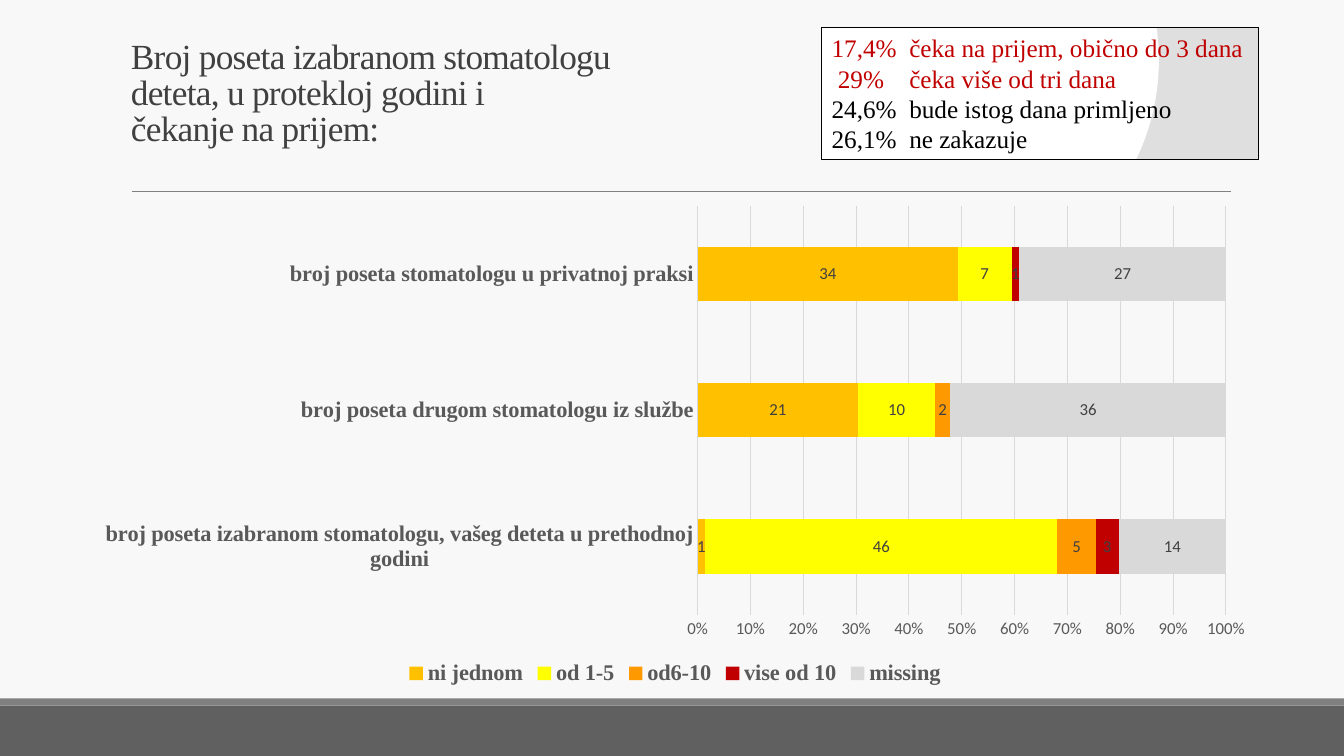
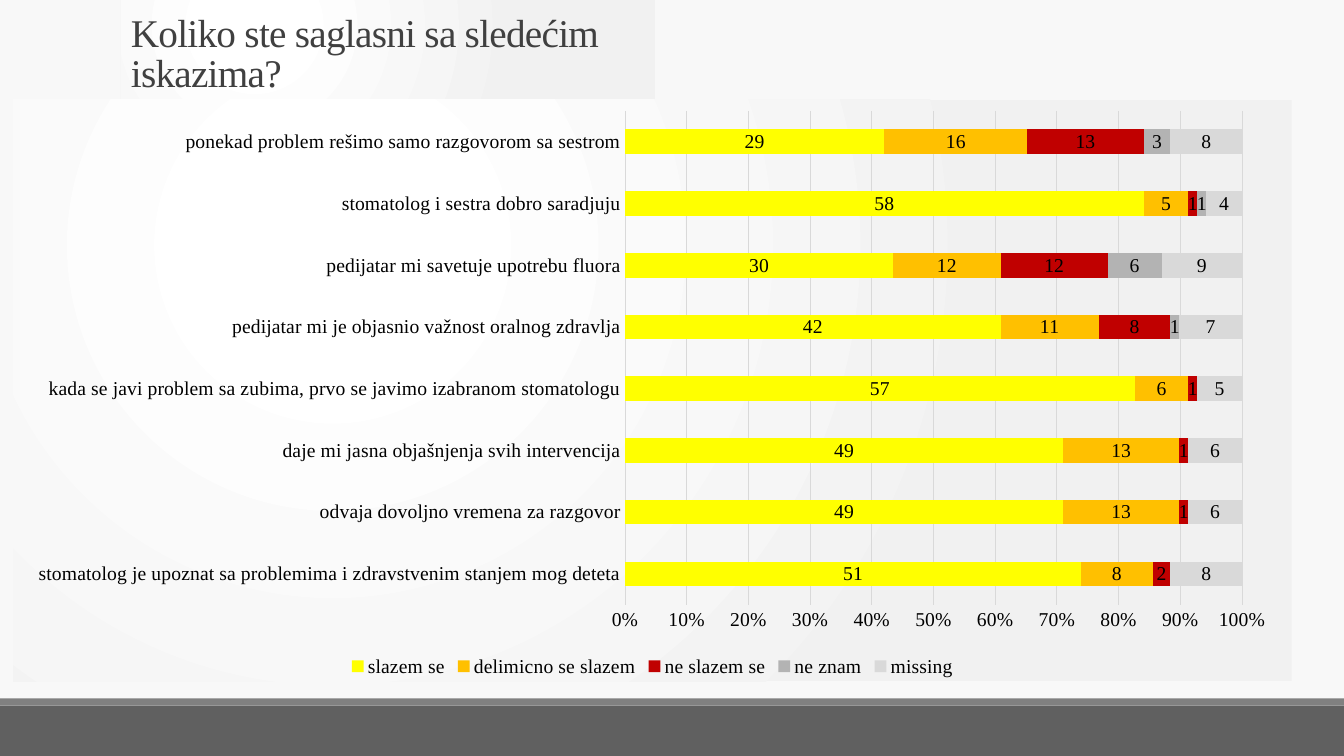
from dataclasses import dataclass

from lxml import etree
from pptx import Presentation
from pptx.chart.data import CategoryChartData
from pptx.dml.color import RGBColor
from pptx.enum.chart import XL_CHART_TYPE, XL_LABEL_POSITION, XL_LEGEND_POSITION, XL_TICK_MARK
from pptx.enum.shapes import MSO_CONNECTOR, MSO_SHAPE
from pptx.enum.text import MSO_ANCHOR, PP_ALIGN
from pptx.oxml import parse_xml
from pptx.oxml.ns import nsdecls, qn
from pptx.util import Inches, Pt


@dataclass(frozen=True)
class Theme:
    serif: str = "Times New Roman"
    sans: str = "Calibri"
    paper: str = "F8F8F8"
    band: str = "606060"
    rule: str = "808080"
    title: str = "404040"
    muted: str = "595959"
    ink: str = "000000"
    grid: str = "D9D9D9"
    amber: str = "FFC000"
    yellow: str = "FFFF00"
    orange: str = "FF9900"
    red: str = "C00000"
    gray: str = "B3B3B3"
    hairline: float = 0.75
    note_size: int = 18
    soft_glow: tuple = ((13, "FFFFFF"), (100, "F1F1F1"))
    hard_glow: tuple = ((100, "FFFFFF"), (100, "DFDFDF"))


THEME = Theme()
SERIF_14 = (THEME.serif, 14, THEME.ink, False)
SERIF_16_BOLD = (THEME.serif, 16, THEME.muted, True)

VISITS = {
    "title": "Broj poseta izabranom stomatologu deteta, u protekloj godini i \včekanje na prijem:",
    "title_size": 25.2,
    "title_box": (1.2, 0.31, 5.34, 1.21),
    "glow": None,
    "chart_box": (0.81, 1.94, 11.77, 4.91),
    "plot_box": (6.92, 2.04, 5.24, 4.06),
    "category_font": SERIF_16_BOLD,
    "legend_font": SERIF_16_BOLD,
    "value_font": (THEME.sans, 12, THEME.muted, False),
    "label_font": (THEME.sans, 12, THEME.title, False),
    "categories": [
        "broj poseta izabranom stomatologu, vašeg deteta u prethodnoj godini",
        "broj poseta drugom stomatologu iz službe",
        "broj poseta stomatologu u privatnoj praksi",
    ],
    "series": [
        ("ni jednom", THEME.amber, (1, 21, 34)),
        ("od 1-5", THEME.yellow, (46, 10, 7)),
        ("od6-10", THEME.orange, (5, 2, None)),
        ("vise od 10", THEME.red, (3, None, 1)),
        ("missing", THEME.grid, (14, 36, 27)),
    ],
}

AGREEMENT = {
    "title": "Koliko ste saglasni sa sledećim iskazima?",
    "title_size": 28,
    "title_box": (1.2, 0, 5.3, 1),
    "glow": THEME.soft_glow,
    "chart_box": (0.13, 0.99, 12.68, 5.77),
    "plot_box": (6.2, 1.1, 6.12, 4.9),
    "category_font": SERIF_14,
    "legend_font": SERIF_14,
    "value_font": SERIF_14,
    "label_font": SERIF_14,
    "categories": [
        "stomatolog je upoznat sa problemima i zdravstvenim stanjem mog deteta",
        "odvaja dovoljno vremena za razgovor",
        "daje mi jasna objašnjenja svih intervencija",
        "kada se javi problem sa zubima, prvo se javimo izabranom stomatologu",
        "pedijatar mi je objasnio važnost oralnog zdravlja",
        "pedijatar mi savetuje upotrebu fluora",
        "stomatolog i sestra dobro saradjuju",
        "ponekad problem rešimo samo razgovorom sa sestrom",
    ],
    "series": [
        ("slazem se", THEME.yellow, (51, 49, 49, 57, 42, 30, 58, 29)),
        ("delimicno se slazem", THEME.amber, (8, 13, 13, 6, 11, 12, 5, 16)),
        ("ne slazem se", THEME.red, (2, 1, 1, 1, 8, 12, 1, 13)),
        ("ne znam", THEME.gray, (None, None, None, None, 1, 6, 1, 3)),
        ("missing", THEME.grid, (8, 6, 6, 5, 7, 9, 4, 8)),
    ],
}

WAITING_BOX = (8.15, 0.27, 4.33, 1.31)
WAITING = [
    ("17,4%", "čeka na prijem, obično do 3 dana", THEME.red),
    (" 29%", "čeka više od tri dana", THEME.red),
    ("24,6%", "bude istog dana primljeno", THEME.ink),
    ("26,1%", "ne zakazuje", THEME.ink),
]
BANDS = [((0, 7, 13.33, 0.5), THEME.band), ((0, 6.93, 13.33, 0.07), THEME.rule)]
RULE = (1.31, 1.9, 12.21, 1.9)


def inches(box):
    return [Inches(length) for length in box]


def rgb(color):
    return RGBColor.from_string(color)


def style_font(font, name, size, color, bold=False):
    font.name, font.size, font.bold = name, Pt(size), bold
    font.color.rgb = rgb(color)


def glow_fill(properties, stops):
    stop_xml = "".join(
        f'<a:gs pos="{position * 1000}"><a:srgbClr val="{color}"/></a:gs>' for position, color in stops
    )
    gradient = parse_xml(
        f'<a:gradFill {nsdecls("a")} rotWithShape="1"><a:gsLst>{stop_xml}</a:gsLst>'
        '<a:path path="circle"><a:fillToRect l="50000" t="50000" r="100000" b="100000"/></a:path>'
        "</a:gradFill>"
    )
    properties.replace(properties.find(qn("a:noFill")), gradient)


def add_rectangle(page, box):
    shape = page.shapes.add_shape(MSO_SHAPE.RECTANGLE, *inches(box))
    shape.shadow.inherit = False
    shape.line.fill.background()
    shape.fill.background()
    return shape


def add_bands(page):
    page.background.fill.solid()
    page.background.fill.fore_color.rgb = rgb(THEME.paper)
    for box, color in BANDS:
        band = add_rectangle(page, box)
        band.fill.solid()
        band.fill.fore_color.rgb = rgb(color)


def add_title(page, content):
    box = page.shapes.add_textbox(*inches(content["title_box"]))
    if content["glow"]:
        box.fill.background()
        glow_fill(box.element.spPr, content["glow"])
    frame = box.text_frame
    frame.word_wrap = True
    frame.vertical_anchor = MSO_ANCHOR.BOTTOM
    para = frame.paragraphs[0]
    para.text = content["title"]
    para.line_spacing = 0.85
    for span in para.runs:
        style_font(span.font, THEME.serif, content["title_size"], THEME.title)
        span.font._element.set("spc", "-50")


def place_plot(chart, chart_box, plot_box):
    left, top, width, height = chart_box
    plot_left, plot_top, plot_width, plot_height = plot_box
    places = {
        "x": (plot_left - left) / width,
        "y": (plot_top - top) / height,
        "w": plot_width / width,
        "h": plot_height / height,
    }
    modes = '<c:layoutTarget val="inner"/><c:xMode val="edge"/><c:yMode val="edge"/>'
    values = "".join(f'<c:{key} val="{value:.4f}"/>' for key, value in places.items())
    layout = parse_xml(
        f'<c:layout {nsdecls("c")}><c:manualLayout>{modes}{values}</c:manualLayout></c:layout>'
    )
    plot_area = chart.element.find(".//" + qn("c:plotArea"))
    for existing in plot_area.findall(qn("c:layout")):
        plot_area.remove(existing)
    plot_area.insert(0, layout)


def fill_chart_area(chart, stops):
    properties = parse_xml(
        f'<c:spPr {nsdecls("c", "a")}><a:noFill/><a:ln><a:noFill/></a:ln></c:spPr>'
    )
    chart.element.find(qn("c:chart")).addnext(properties)
    if stops:
        glow_fill(properties, stops)


def add_bar_chart(page, content):
    data = CategoryChartData()
    data.categories = content["categories"]
    for name, _, values in content["series"]:
        data.add_series(name, values)
    chart = page.shapes.add_chart(
        XL_CHART_TYPE.BAR_STACKED_100, *inches(content["chart_box"]), data
    ).chart
    chart.has_title = False
    style_font(chart.font, *content["value_font"])
    place_plot(chart, content["chart_box"], content["plot_box"])
    fill_chart_area(chart, content["glow"])

    plot = chart.plots[0]
    plot.gap_width, plot.overlap, plot.vary_by_categories = 150, 100, False
    for series, (_, color, _) in zip(plot.series, content["series"]):
        series.format.fill.solid()
        series.format.fill.fore_color.rgb = rgb(color)
    plot.has_data_labels = True
    plot.data_labels.show_value = True
    plot.data_labels.position = XL_LABEL_POSITION.CENTER
    style_font(plot.data_labels.font, *content["label_font"])

    for axis, font in (
        (chart.category_axis, content["category_font"]),
        (chart.value_axis, content["value_font"]),
    ):
        axis.major_tick_mark = axis.minor_tick_mark = XL_TICK_MARK.NONE
        style_font(axis.tick_labels.font, *font)
    chart.value_axis.tick_labels.number_format = "0%"
    chart.value_axis.tick_labels.number_format_is_linked = False
    chart.value_axis.format.line.fill.background()
    chart.value_axis.has_major_gridlines = True
    for line in (chart.category_axis.format.line, chart.value_axis.major_gridlines.format.line):
        line.color.rgb = rgb(THEME.grid)
        line.width = Pt(THEME.hairline)

    chart.has_legend = True
    chart.legend.position = XL_LEGEND_POSITION.BOTTOM
    chart.legend.include_in_layout = False
    style_font(chart.legend.font, *content["legend_font"])


def add_rule(page):
    rule = page.shapes.add_connector(MSO_CONNECTOR.STRAIGHT, *inches(RULE))
    rule.line.color.rgb = rgb(THEME.rule)
    rule.line.width = Pt(0.5)
    etree.SubElement(rule.element.spPr, qn("a:effectLst"))


def add_waiting_box(page):
    box = add_rectangle(page, WAITING_BOX)
    glow_fill(box.element.spPr, THEME.hard_glow)
    box.line.color.rgb = rgb(THEME.ink)
    box.line.width = Pt(THEME.hairline)
    frame = box.text_frame
    frame.word_wrap = True
    frame.text = "\n".join(f"{share}\t{answer}" for share, answer, _ in WAITING)
    for para, (_, _, color) in zip(frame.paragraphs, WAITING):
        para.alignment = PP_ALIGN.LEFT
        stops = etree.SubElement(para._p.get_or_add_pPr(), qn("a:tabLst"))
        etree.SubElement(stops, qn("a:tab"), pos=str(Inches(0.77)), algn="l")
        for span in para.runs:
            style_font(span.font, THEME.serif, THEME.note_size, color)


def add_page(deck, content):
    page = deck.slides.add_slide(deck.slide_layouts[6])
    add_bands(page)
    add_title(page, content)
    add_bar_chart(page, content)
    return page


def main():
    deck = Presentation()
    deck.slide_width, deck.slide_height = Inches(13.33), Inches(7.5)
    visits_page = add_page(deck, VISITS)
    add_rule(visits_page)
    add_waiting_box(visits_page)
    add_page(deck, AGREEMENT)
    deck.save("out.pptx")


if __name__ == "__main__":
    main()
